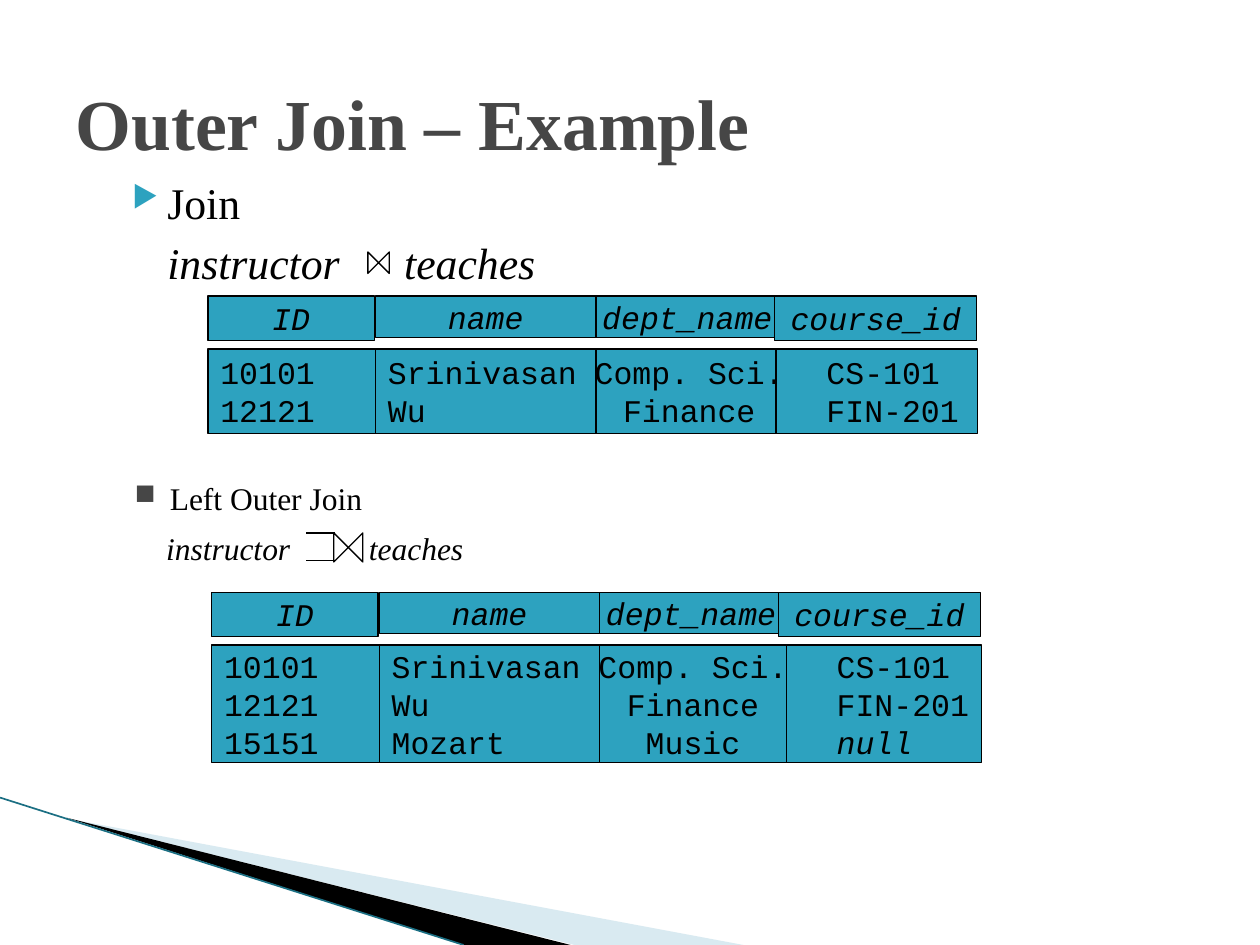
from lxml import etree
from pptx import Presentation
from pptx.dml.color import RGBColor
from pptx.enum.shapes import MSO_CONNECTOR, MSO_SHAPE
from pptx.enum.text import MSO_ANCHOR, PP_ALIGN
from pptx.oxml.ns import qn
from pptx.util import Inches, Pt

SERIF = "Times New Roman"
MONO = "Courier New"
BLACK = "000000"
TEAL = "2DA2BF"
GREY = "464646"


def color(value):
    return RGBColor.from_string(value)


def style(font, name, size, value=BLACK, bold=False, italic=False):
    font.name = name
    font.size = Pt(size)
    font.bold = bold
    font.italic = italic
    font.color.rgb = color(value)


presentation = Presentation()
presentation.slide_width = Inches(10)
presentation.slide_height = Inches(7.5)
slide = presentation.slides.add_slide(presentation.slide_layouts[5])
shapes = slide.shapes

# Decorative wedges in the bottom left corner
wedges = [
    ([(0.55, 6.5), (5.9, 7.5), (4.56, 7.5)], "A0CBDC", 40),
    ([(0.53, 6.49), (4.53, 7.5), (3.68, 7.5)], BLACK, 100),
]
for points, fill, opacity in wedges:
    corners = [(Inches(x), Inches(y)) for x, y in points]
    builder = shapes.build_freeform(*corners[0], scale=1.0)
    builder.add_line_segments(corners[1:], close=True)
    wedge = builder.convert_to_shape()
    wedge.shadow.inherit = False
    wedge.fill.solid()
    wedge.fill.fore_color.rgb = color(fill)
    wedge.line.fill.background()
    if opacity < 100:
        rgb = wedge._element.spPr.find(".//" + qn("a:srgbClr"))
        etree.SubElement(rgb, qn("a:alpha"), val=str(opacity * 1000))

# Title
title = shapes.title
title.left, title.top = Inches(0.5), Inches(0.34)
title.width, title.height = Inches(9), Inches(1.25)
title.text_frame.text = "Outer Join – Example"
title.text_frame.vertical_anchor = MSO_ANCHOR.MIDDLE
title_paragraph = title.text_frame.paragraphs[0]
title_paragraph.alignment = PP_ALIGN.LEFT
style(title_paragraph.runs[0].font, SERIF, 41, GREY, bold=True)

# Headings, each with its formula on tab stops that leave room for the join symbol
headings = [
    # box, heading, size, bullet, bullet color, bullet %, indent, line spacing, gap, tabs
    ((0.83, 1.46, 7.65, 0.92), "Join", 25, "▶", TEAL, 68, (0.4, -0.28), 0.7, 13, (0.4, 2.28)),
    ((0.97, 3.75, 4.63, 0.81), "Left Outer Join", 18, "■", GREY, 90, (0.28, -0.28), 1.0, 7, (0.25, 1.86)),
]
for box, heading, size, bullet, bullet_color, percent, indent, spacing, gap, tabs in headings:
    text_box = shapes.add_textbox(*[Inches(length) for length in box])
    text_frame = text_box.text_frame
    text_frame.word_wrap = True
    text_frame.text = heading
    heading_paragraph = text_frame.paragraphs[0]
    formula = text_frame.add_paragraph()
    formula.text = "\tinstructor\tteaches"

    properties = heading_paragraph._p.get_or_add_pPr()
    properties.set("marL", str(Inches(indent[0])))
    properties.set("indent", str(Inches(indent[1])))
    bullet_fill = etree.SubElement(properties, qn("a:buClr"))
    etree.SubElement(bullet_fill, qn("a:srgbClr"), val=bullet_color)
    etree.SubElement(properties, qn("a:buSzPct"), val=str(percent * 1000))
    etree.SubElement(properties, qn("a:buChar"), char=bullet)

    tab_list = etree.SubElement(formula._p.get_or_add_pPr(), qn("a:tabLst"))
    for position in tabs:
        etree.SubElement(tab_list, qn("a:tab"), pos=str(Inches(position)), algn="l")

    formula.space_before = Pt(gap)
    for paragraph in (heading_paragraph, formula):
        paragraph.line_spacing = spacing
        style(paragraph.runs[0].font, SERIF, size, italic=paragraph is formula)

# Join symbols
for left, top, size in [(2.92, 2.0, 0.17), (2.65, 4.23, 0.23)]:
    bowtie = shapes.add_shape(MSO_SHAPE.FLOWCHART_COLLATE, Inches(left), Inches(top),
                              Inches(size), Inches(size))
    bowtie.rotation = 270
    bowtie.shadow.inherit = False
    bowtie.fill.background()
    bowtie.line.color.rgb = color(BLACK)
    bowtie.line.width = Pt(0.75)

# Wedge edge and the two bars of the left outer join
lines = [
    ((0, 6.33), (3.68, 7.5), "1B6F83", 0.95),
    ((2.66, 4.23), (2.43, 4.23), BLACK, 0.75),
    ((2.65, 4.45), (2.43, 4.45), BLACK, 0.75),
]
for start, end, line_color, width in lines:
    connector = shapes.add_connector(MSO_CONNECTOR.STRAIGHT,
                                     *[Inches(length) for length in start + end])
    connector.line.color.rgb = color(line_color)
    connector.line.width = Pt(width)
    etree.SubElement(connector._element.spPr, qn("a:effectLst"))

# Relations: a row of header boxes over a row of value boxes
columns = [
    # name, offset, header width, header height, value width, value alignment, value inset
    ("ID", 0, 1.32, 0.35, 1.35, PP_ALIGN.LEFT, 0.1),
    ("name", 1.33, 1.75, 0.33, 1.75, PP_ALIGN.LEFT, 0.1),
    ("dept_name", 3.08, 1.45, 0.33, 1.48, PP_ALIGN.CENTER, 0.1),
    ("course_id", 4.5, 1.6, 0.35, 1.6, PP_ALIGN.LEFT, 0.4),
]
joined = [
    ("10101", "Srinivasan", "Comp. Sci.", "CS-101"),
    ("12121", "Wu", "Finance", "FIN-201"),
]
relations = [
    # left, top, value height, shift of the last value box, rows
    (1.65, 2.35, 0.67, 0.01, joined),
    (1.68, 4.7, 0.93, 0.06, joined + [("15151", "Mozart", "Music", "null")]),
]
for left, top, value_height, shift, rows in relations:
    for column, values in zip(columns, zip(*rows)):
        name, offset, width, height, value_width, alignment, inset = column
        x = left + offset
        value_x = x
        if name == "course_id":
            value_x += shift
            value_width = left + 6.11 - value_x
        boxes = [
            (x, top, width, height, [name], PP_ALIGN.CENTER, 0.1),
            (value_x, top + 0.42, value_width, value_height, values, alignment, inset),
        ]
        for *bounds, texts, text_alignment, margin in boxes:
            cell = shapes.add_shape(MSO_SHAPE.RECTANGLE, *[Inches(length) for length in bounds])
            cell.shadow.inherit = False
            cell.fill.solid()
            cell.fill.fore_color.rgb = color(TEAL)
            cell.line.color.rgb = color(BLACK)
            cell.line.width = Pt(0.75)
            text_frame = cell.text_frame
            text_frame.word_wrap = False
            text_frame.vertical_anchor = MSO_ANCHOR.MIDDLE
            text_frame.margin_left = Inches(margin)
            text_frame.text = "\n".join(texts)
            for paragraph in text_frame.paragraphs:
                paragraph.alignment = text_alignment
                style(paragraph.runs[0].font, MONO, 18,
                      italic=paragraph.text in (name, "null"))

presentation.save("out.pptx")
